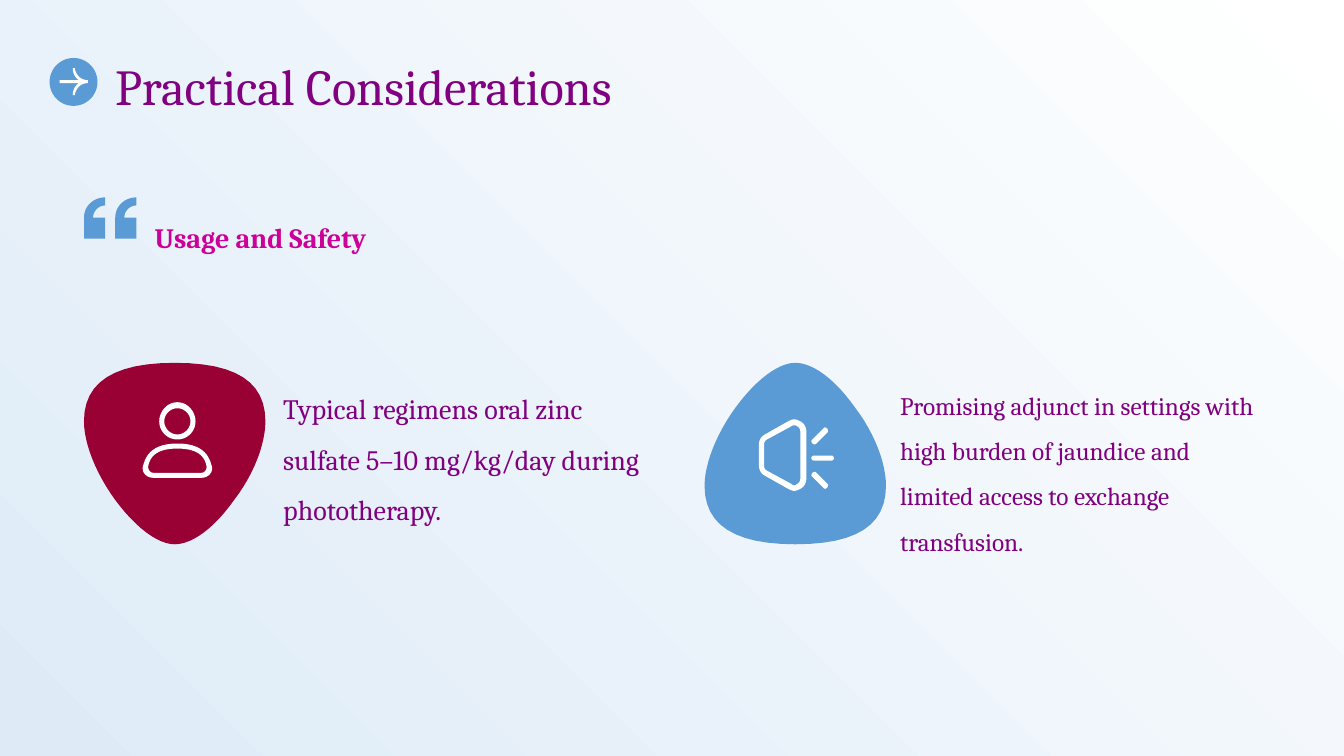
import pptx
import pptx.dml.color
import pptx.enum.shapes
import pptx.enum.text
import pptx.util

RGBColor = pptx.dml.color.RGBColor
MSO_SHAPE = pptx.enum.shapes.MSO_SHAPE
MSO_ANCHOR = pptx.enum.text.MSO_ANCHOR

WHITE = RGBColor(0xFF, 0xFF, 0xFF)
PALE_BLUE = RGBColor(0xDE, 0xEB, 0xF7)
BLUE = RGBColor(0x5B, 0x9B, 0xD5)
CRIMSON = RGBColor(0x99, 0x00, 0x33)
PURPLE = RGBColor(0x80, 0x00, 0x80)
MAGENTA = RGBColor(0xCC, 0x00, 0x99)

# Square grid cells of a twelfth of an inch
COLUMNS, ROWS = 160, 90
CELL = 76200
# Outlines are drawn in hundredths of an inch
OUTLINE_UNIT = 9144
CURVE_STEPS = 12

DROP_SIZE = 180
DROP = """M 90 0 C 30 0 0 19 0 58 C 0 80 12 110 31 136 C 51 163 73 180 90 180
    C 108 180 130 163 149 136 C 169 110 180 80 180 58 C 180 19 151 0 90 0"""
ARROW = """M 0 12 L 19 12 C 15 9 13 5 13 0 L 15 0 C 16 7 21 12 28 12 L 28 15
    C 21 15 16 20 15 27 L 13 27 C 13 22 15 18 19 15 L 0 15"""
QUOTE_MARK = "M 21 0 L 21 8 C 14 8 9 14 9 20 L 21 20 L 21 41 L 0 41 L 0 20 C 0 9 9 0 21 0"
PERSON = """M 35 0 C 25 0 17 9 17 19 C 17 29 25 37 35 37 C 45 37 53 29 53 19 C 53 9 45 0 35 0
    M 35 6 C 42 6 48 12 48 19 C 48 26 42 32 35 32 C 28 32 22 26 22 19 C 22 12 28 6 35 6
    M 35 41 C 12 41 4 51 1 63 C -1 69 4 75 11 75 L 59 75 C 66 75 71 69 69 63 C 66 51 58 41 35 41
    M 35 46 C 53 46 62 52 64 64 C 64 67 62 70 59 70 L 11 70 C 8 70 6 67 6 64 C 8 52 17 46 35 46"""
SPEAKER = """M 35 0 C 37 0 39 1 41 2 C 45 4 47 8 47 12 L 47 59 C 47 63 45 67 41 69
    C 39 70 37 71 35 71 C 33 71 31 70 29 69 L 6 56 C 2 54 0 50 0 46 L 0 25
    C 0 21 2 17 6 15 L 29 2 C 31 1 33 0 35 0
    M 35 6 C 34 6 33 6 32 7 L 8 20 C 6 21 5 23 5 25 L 5 46 C 5 48 6 50 8 51 L 32 64
    C 34 66 36 66 38 64 C 40 63 41 61 41 59 L 41 12 C 41 10 40 8 38 7 C 37 6 36 6 35 6
    M 57 24 L 68 13 C 70 11 66 6 64 9 L 53 20 C 50 22 55 27 57 24
    M 55 36 L 72 36 C 75 36 75 41 72 41 L 55 41 C 51 41 51 36 55 36
    M 57 53 L 68 64 C 70 66 66 71 64 68 L 53 57 C 50 55 55 50 57 53"""


def curve_points(start, first, second, end):
    """Points along a cubic curve, without its start."""
    points = []
    for step in range(1, CURVE_STEPS + 1):
        t = step / CURVE_STEPS
        weights = ((1 - t) ** 3, 3 * t * (1 - t) ** 2, 3 * t * t * (1 - t), t ** 3)
        corners = (start, first, second, end)
        points.append(tuple(sum(w * c[axis] for w, c in zip(weights, corners))
                            for axis in (0, 1)))
    return points


def contours(drawing):
    """Turn move, line and curve commands into lists of points."""
    result = []
    tokens = iter(drawing.split())
    for command in tokens:
        count = 3 if command == "C" else 1
        pairs = [(float(next(tokens)), float(next(tokens))) for _ in range(count)]
        if command == "M":
            result.append(pairs)
        elif command == "L":
            result[-1] += pairs
        else:
            result[-1] += curve_points(result[-1][-1], *pairs)
    return result


class SlideBuilder:
    font_name = "Cambria"

    def __init__(self, slide):
        self.slide = slide

    def box(self, *cells):
        return [pptx.util.Emu(round(value * CELL)) for value in cells]

    def finish(self, shape, color):
        shape.shadow.inherit = False
        shape.line.fill.background()
        if color is not None:
            shape.fill.solid()
            shape.fill.fore_color.rgb = color
        return shape

    def preset(self, kind, left, top, width, height, color=None):
        shape = self.slide.shapes.add_shape(kind, *self.box(left, top, width, height))
        return self.finish(shape, color)

    def backdrop(self, first, last):
        shape = self.preset(MSO_SHAPE.RECTANGLE, 0, 0, COLUMNS, ROWS)
        shape.fill.gradient()
        shape.fill.gradient_angle = 315
        for stop, color in zip(shape.fill.gradient_stops, (first, last)):
            stop.color.rgb = color
        shape._element.spPr.xfrm.set("flipH", "1")

    def outline(self, left, top, outlines, color):
        x, y = self.box(left, top)
        placed = [[(x + px * OUTLINE_UNIT, y + py * OUTLINE_UNIT) for px, py in points]
                  for points in outlines]
        builder = self.slide.shapes.build_freeform(*placed[0][0])
        for index, points in enumerate(placed):
            if index:
                builder.move_to(*points[0])
            builder.add_line_segments(points[1:], close=True)
        self.finish(builder.convert_to_shape(), color)

    def text(self, left, top, width, height, words, size, color, spacing=1.5,
             bold=False, anchor=MSO_ANCHOR.TOP):
        shape = self.slide.shapes.add_textbox(*self.box(left, top, width, height))
        frame = shape.text_frame
        frame.word_wrap = True
        frame.vertical_anchor = anchor
        frame.margin_left = frame.margin_right = frame.margin_top = frame.margin_bottom = 0
        paragraph = frame.paragraphs[0]
        paragraph.line_spacing = spacing
        run = paragraph.add_run()
        run.text = words
        run.font.name = self.font_name
        run.font.size = pptx.util.Pt(size)
        run.font.bold = bold
        run.font.color.rgb = color


def main():
    presentation = pptx.Presentation()
    presentation.slide_width = COLUMNS * CELL
    presentation.slide_height = ROWS * CELL
    builder = SlideBuilder(presentation.slides.add_slide(presentation.slide_layouts[6]))
    builder.backdrop(WHITE, PALE_BLUE)

    # Two points, each with a drop, an icon and a text
    drop = contours(DROP)
    upturned_drop = [[(x, DROP_SIZE - y) for x, y in points] for points in drop]
    considerations = [
        (10, drop, CRIMSON, 16.92, 47.88, PERSON, 33.72, 20,
         "Typical regimens oral zinc sulfate 5–10 mg/kg/day during phototherapy."),
        (83.88, upturned_drop, BLUE, 90.36, 49.92, SPEAKER, 107.16, 18,
         "Promising adjunct in settings with high burden of jaundice and limited "
         "access to exchange transfusion."),
    ]
    for (drop_left, drop_outline, color, icon_left, icon_top, icon,
         text_left, size, words) in considerations:
        builder.text(text_left, 44.64, 42.48, 21.6, words, size, PURPLE)
        builder.outline(drop_left, 43.2, drop_outline, color)
        builder.outline(icon_left, icon_top, contours(icon), WHITE)

    # Subheading with a pair of quote marks
    quote_mark = contours(QUOTE_MARK)[0]
    quote_pair = [[(x + shift, y) for x, y in quote_mark] for shift in (31, 0)]
    builder.outline(10, 23.5, quote_pair, BLUE)
    builder.text(18.4, 24.24, 131.28, 17, "Usage and Safety", 20, MAGENTA, bold=True)

    # Title with an arrow badge
    builder.text(13.7, 7, 137.4, 5.6, "Practical Considerations", 36, PURPLE,
                 spacing=1.1, anchor=MSO_ANCHOR.MIDDLE)
    builder.preset(MSO_SHAPE.OVAL, 5.9, 6.9, 5.7, 5.7, BLUE)
    builder.outline(7.1, 8.1, contours(ARROW), WHITE)

    presentation.save("out.pptx")


if __name__ == "__main__":
    main()
